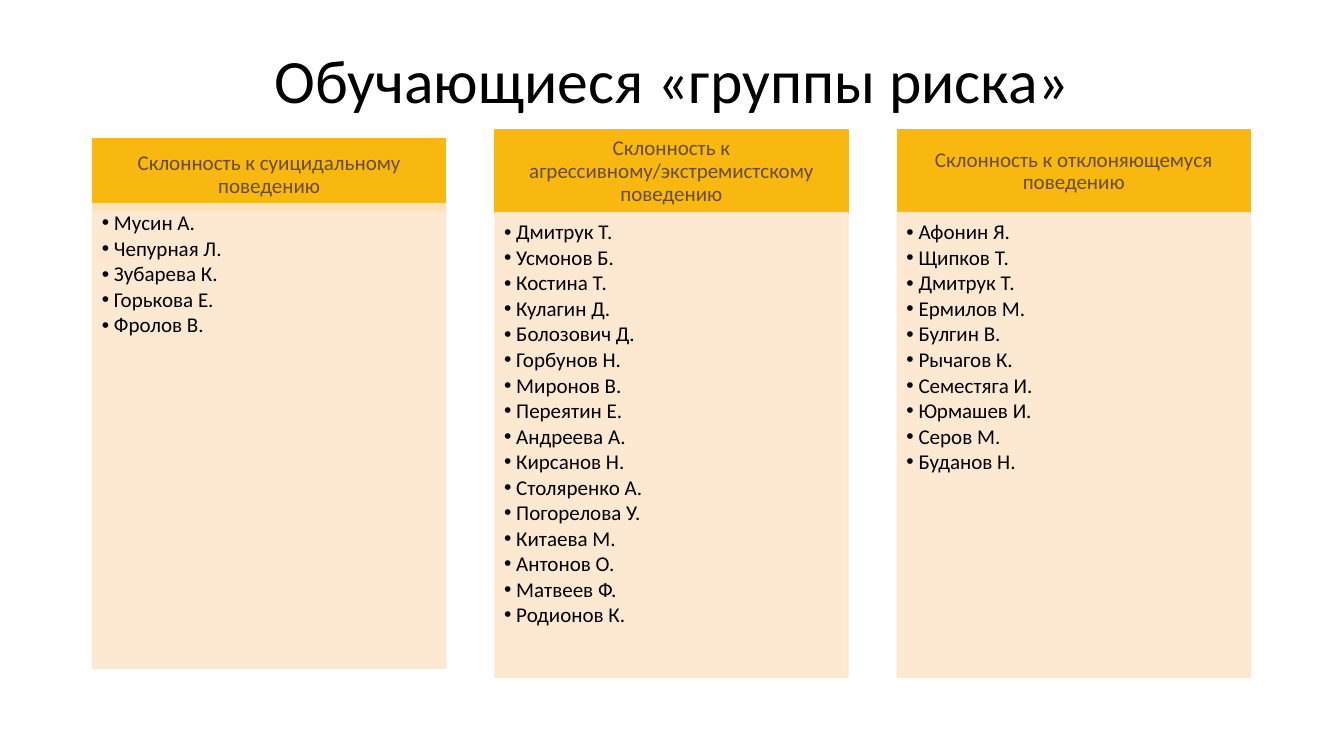
"""Build a slide listing students of the risk group in three columns."""

from dataclasses import dataclass

import lxml.etree
import pptx
import pptx.dml.color
import pptx.enum.shapes
import pptx.enum.text
import pptx.oxml.ns
import pptx.util

EMU_PER_PX = 9144
LEFT, COLUMN_STEP, COLUMN_WIDTH, PANEL_HEIGHT = 92, 399, 350, 461
ALIGN = pptx.enum.text.PP_ALIGN
ANCHOR = pptx.enum.text.MSO_ANCHOR


@dataclass(frozen=True)
class Theme:
    font: str = "Calibri"
    title_size: int = 44
    text_size: int = 15
    text: str = "000000"
    heading: str = "684C2B"
    heading_fill: str = "F9B810"
    panel_fill: str = "FDE6CC"
    panel_opacity: int = 90


@dataclass(frozen=True)
class RiskGroup:
    heading: str
    heading_top: int
    heading_height: int
    panel_top: int
    students: list[str]


THEME = Theme()
GROUPS = [
    RiskGroup("Склонность к суицидальному поведению", 138, 71, 202, [
        "Мусин А.", "Чепурная Л.", "Зубарева К.", "Горькова Е.", "Фролов В.",
    ]),
    RiskGroup("Склонность к агрессивному/экстремистскому поведению", 129, 83, 211, [
        "Дмитрук Т.", "Усмонов Б.", "Костина Т.", "Кулагин Д.",
        "Болозович Д.", "Горбунов Н.", "Миронов В.", "Переятин Е.",
        "Андреева А.", "Кирсанов Н.", "Столяренко А.", "Погорелова У.",
        "Китаева М.", "Антонов О.", "Матвеев Ф.", "Родионов К.",
    ]),
    RiskGroup("Склонность к отклоняющемуся поведению", 129, 83, 211, [
        "Афонин Я.", "Щипков Т.", "Дмитрук Т.", "Ермилов М.", "Булгин В.",
        "Рычагов К.", "Семестяга И.", "Юрмашев И.", "Серов М.", "Буданов Н.",
    ]),
]


def px(length: int) -> pptx.util.Emu:
    return pptx.util.Emu(length * EMU_PER_PX)


def place(shape, left: int, top: int, width: int, height: int) -> None:
    shape.left, shape.top = px(left), px(top)
    shape.width, shape.height = px(width), px(height)


def paint(shape, color: str) -> None:
    shape.fill.solid()
    shape.fill.fore_color.rgb = pptx.dml.color.RGBColor.from_string(color)
    shape.line.color.rgb = pptx.dml.color.RGBColor.from_string(color)
    shape.line.width = pptx.util.Pt(1)


def set_opacity(shape, percent: int) -> None:
    for color in shape._element.spPr.iter(pptx.oxml.ns.qn("a:srgbClr")):
        alpha = lxml.etree.SubElement(color, pptx.oxml.ns.qn("a:alpha"))
        alpha.set("val", str(percent * 1000))


def set_frame(frame, anchor, insets: tuple[int, int, int, int]) -> None:
    frame.word_wrap = True
    frame.auto_size = pptx.enum.text.MSO_AUTO_SIZE.NONE
    frame.vertical_anchor = anchor
    frame.margin_left, frame.margin_top, frame.margin_right, frame.margin_bottom = map(px, insets)


def format_paragraph(paragraph, size: int, color: str, align) -> None:
    paragraph.alignment = align
    paragraph.line_spacing = 0.9
    paragraph.space_before = pptx.util.Pt(0)
    for run in paragraph.runs:
        run.font.name = THEME.font
        run.font.size = pptx.util.Pt(size)
        run.font.bold = False
        run.font.color.rgb = pptx.dml.color.RGBColor.from_string(color)


def add_bullet(paragraph) -> None:
    properties = paragraph._p.get_or_add_pPr()
    properties.set("marL", str(px(12)))
    properties.set("indent", str(px(-12)))
    bullet_font = lxml.etree.SubElement(properties, pptx.oxml.ns.qn("a:buFont"))
    bullet_font.set("typeface", "Arial")
    bullet = lxml.etree.SubElement(properties, pptx.oxml.ns.qn("a:buChar"))
    bullet.set("char", "•")


def add_heading(slide, group: RiskGroup, left: int):
    heading = slide.shapes.add_shape(
        pptx.enum.shapes.MSO_SHAPE.RECTANGLE,
        px(left), px(group.heading_top), px(COLUMN_WIDTH), px(group.heading_height),
    )
    heading.shadow.inherit = False
    paint(heading, THEME.heading_fill)
    heading.text_frame.text = group.heading
    set_frame(heading.text_frame, ANCHOR.MIDDLE, (12, 7, 12, 7))
    format_paragraph(heading.text_frame.paragraphs[0], THEME.text_size, THEME.heading, ALIGN.CENTER)
    return heading


def fill_student_list(panel, group: RiskGroup, left: int) -> None:
    place(panel, left, group.panel_top, COLUMN_WIDTH, PANEL_HEIGHT)
    paint(panel, THEME.panel_fill)
    set_opacity(panel, THEME.panel_opacity)
    panel.text_frame.text = "\n".join(group.students)
    set_frame(panel.text_frame, ANCHOR.TOP, (9, 9, 12, 13))
    for student in panel.text_frame.paragraphs:
        student.level = 1
        add_bullet(student)
        format_paragraph(student, THEME.text_size, THEME.text, ALIGN.LEFT)
        student.space_after = pptx.util.Pt(2)


def main() -> None:
    presentation = pptx.Presentation()
    presentation.slide_width, presentation.slide_height = px(1333), px(750)
    comparison = presentation.slide_layouts.get_by_name("Comparison")
    slide = presentation.slides.add_slide(comparison)

    title = slide.shapes.title
    place(title, LEFT, 40, 1150, 85)
    title.text_frame.text = "Обучающиеся «группы риска»"
    set_frame(title.text_frame, ANCHOR.MIDDLE, (10, 5, 10, 5))
    format_paragraph(title.text_frame.paragraphs[0], THEME.title_size, THEME.text, ALIGN.CENTER)

    *panels, spare = list(slide.placeholders)[1:]
    spare._element.getparent().remove(spare._element)
    for column, (group, panel) in enumerate(zip(GROUPS, panels)):
        left = LEFT + column * COLUMN_STEP
        heading = add_heading(slide, group, left)
        fill_student_list(panel, group, left)
        heading._element.addnext(panel._element)

    presentation.save("out.pptx")


if __name__ == "__main__":
    main()
